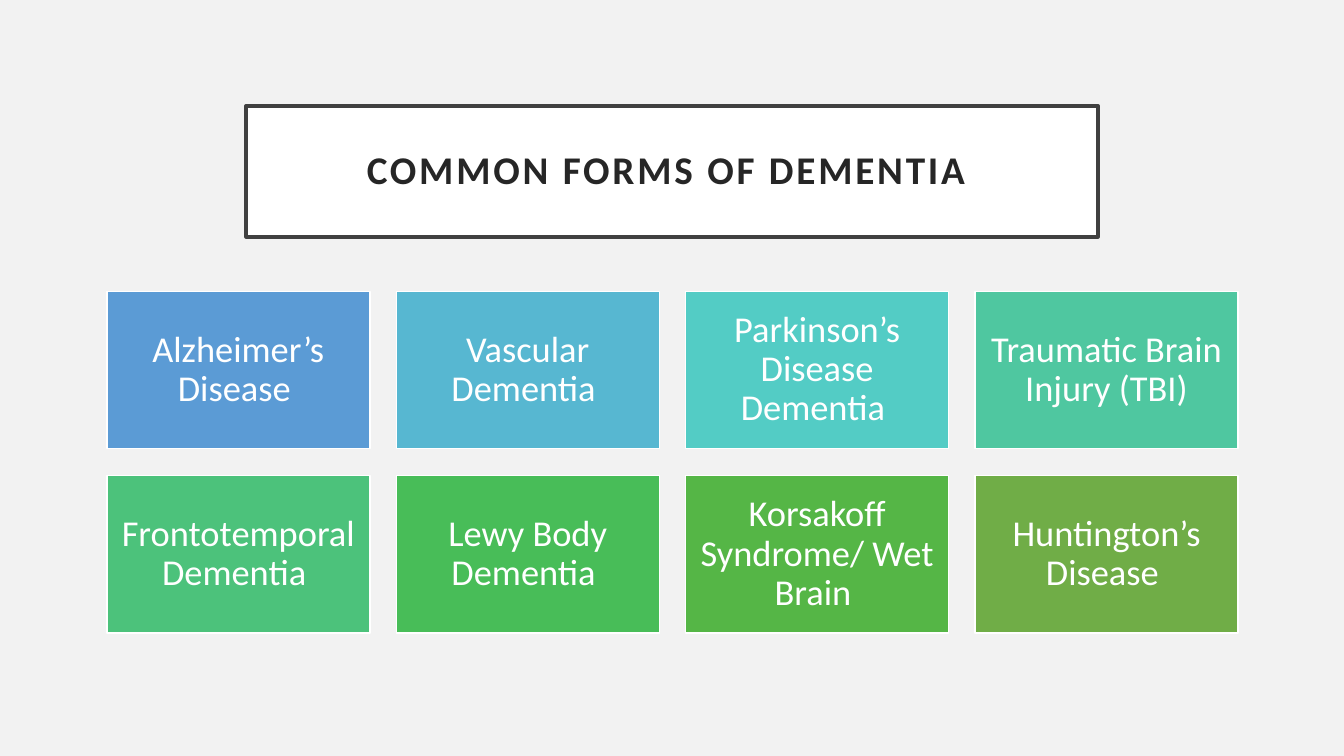
import pptx
import pptx.dml.color
import pptx.enum.shapes
import pptx.enum.text
import pptx.util
from dataclasses import dataclass

Inches = pptx.util.Inches


@dataclass(frozen=True)
class Theme:
    font: str = "Calibri"
    background: str = "F2F2F2"
    white: str = "FFFFFF"
    title_text: str = "262626"
    title_border: str = "404040"
    title_size: int = 28
    tile_size: int = 26


FORMS = [
    ("Alzheimer’s Disease ", "5B9BD5"),
    ("Vascular Dementia ", "57B7D1"),
    ("Parkinson’s Disease Dementia ", "53CCC5"),
    ("Traumatic Brain Injury (TBI)", "4FC7A0"),
    ("Frontotemporal Dementia ", "4CC27B"),
    ("Lewy Body Dementia ", "48BD58"),
    ("Korsakoff Syndrome/ Wet Brain ", "55B646"),
    ("Huntington’s Disease ", "70AD47"),
]


def rgb(value):
    return pptx.dml.color.RGBColor.from_string(value)


class SlideBuilder:
    def __init__(self, slide, theme):
        self.slide = slide
        self.theme = theme
        slide.background.fill.solid()
        slide.background.fill.fore_color.rgb = rgb(theme.background)

    def box(self, left, top, width, height, fill, border, border_width, inset):
        """Add a bordered rectangle and return its text frame."""
        rectangle = self.slide.shapes.add_shape(
            pptx.enum.shapes.MSO_SHAPE.RECTANGLE,
            Inches(left), Inches(top), Inches(width), Inches(height))
        rectangle.shadow.inherit = False
        rectangle.fill.solid()
        rectangle.fill.fore_color.rgb = rgb(fill)
        rectangle.line.color.rgb = rgb(border)
        rectangle.line.width = pptx.util.Pt(border_width)
        frame = rectangle.text_frame
        frame.word_wrap = True
        frame.vertical_anchor = pptx.enum.text.MSO_ANCHOR.MIDDLE
        frame.margin_left = frame.margin_right = Inches(inset)
        frame.margin_top = frame.margin_bottom = Inches(inset)
        return frame

    def label(self, frame, text, size, color):
        """Write one centred line of text and return its run."""
        paragraph = frame.paragraphs[0]
        paragraph.alignment = pptx.enum.text.PP_ALIGN.CENTER
        paragraph.line_spacing = 0.9
        run = paragraph.add_run()
        run.text = text
        run.font.name = self.theme.font
        run.font.size = pptx.util.Pt(size)
        run.font.color.rgb = rgb(color)
        return run

    def title(self, text):
        theme = self.theme
        frame = self.box(2.44, 1.05, 8.45, 1.3, theme.white,
                         theme.title_border, 2.5, 0.2)
        run = self.label(frame, text, theme.title_size, theme.title_text)
        run.font.bold = True
        # Letter spacing of 2 points
        run.font._element.set("spc", "200")

    def tile(self, left, top, text, fill):
        theme = self.theme
        frame = self.box(left, top, 2.61, 1.56, fill, theme.white, 1, 0.11)
        self.label(frame, text, theme.tile_size, theme.white)


def main():
    deck = pptx.Presentation()
    deck.slide_width = Inches(13.33)
    deck.slide_height = Inches(7.5)
    slide = deck.slides.add_slide(deck.slide_layouts[6])
    builder = SlideBuilder(slide, Theme())

    # Title
    builder.title("COMMON FORMS OF DEMENTIA ")

    # Grid of dementia forms, four to a row
    for index, (form, color) in enumerate(FORMS):
        row, column = divmod(index, 4)
        builder.tile(1.06 + column * 2.87, 2.89 + row * 1.83, form, color)

    deck.save("out.pptx")


if __name__ == "__main__":
    main()
